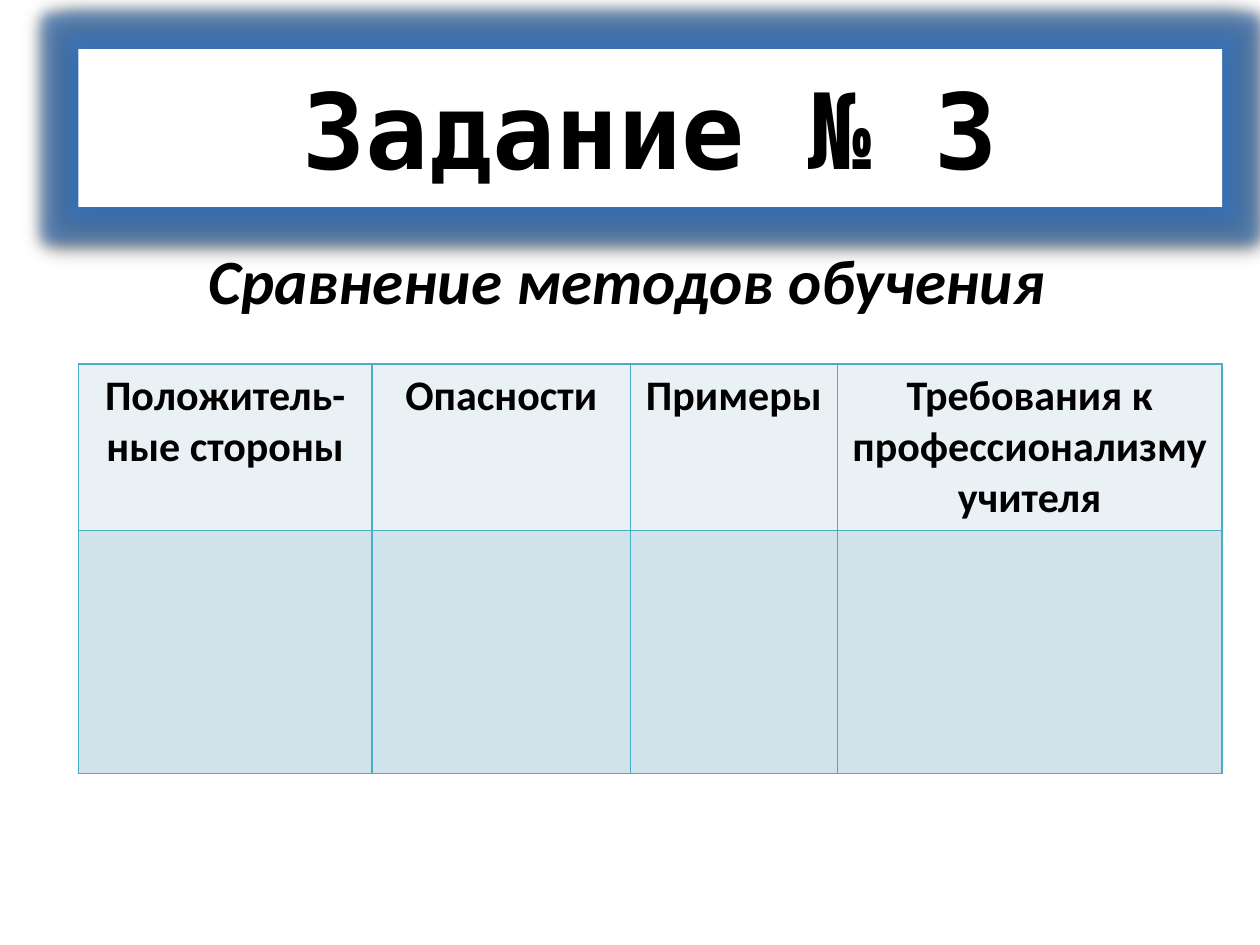
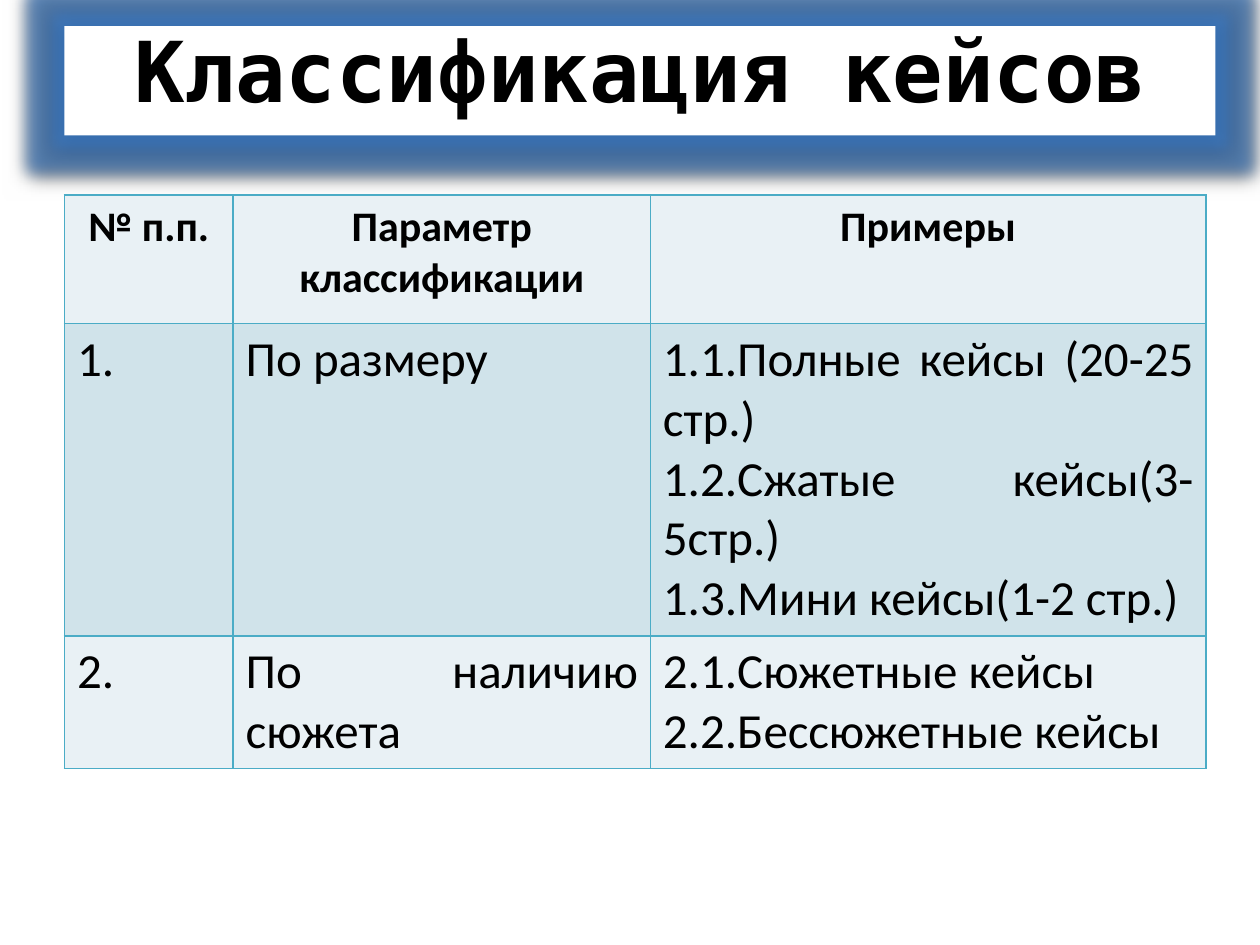
from lxml import etree
from pptx import Presentation
from pptx.dml.color import RGBColor
from pptx.enum import shapes, text
from pptx.oxml import ns
from pptx.util import Cm, Pt

BLACK = RGBColor(0x00, 0x00, 0x00)
WHITE = RGBColor(0xFF, 0xFF, 0xFF)
GLOW = RGBColor(0x3F, 0x80, 0xCD)
BORDER = RGBColor(0x4B, 0xAC, 0xC6)
BANDS = [RGBColor(0xE9, 0xF1, 0xF5), RGBColor(0xD0, 0xE3, 0xEA)]
TITLE_FONT = "DejaVu Sans Mono"
BODY_FONT = "Calibri"
CENTER = text.PP_ALIGN.CENTER
JUSTIFY = text.PP_ALIGN.JUSTIFY

TITLE_EFFECTS = f"""<a:effectLst {ns.nsdecls('a')}>
<a:glow rad="177800"><a:srgbClr val="{GLOW}"><a:alpha val="60000"/></a:srgbClr></a:glow>
<a:outerShdw blurRad="107950" dist="12700" dir="5400000" algn="ctr" rotWithShape="0">
<a:srgbClr val="{BLACK}"/></a:outerShdw></a:effectLst>"""
CELL_LINE = f"""<a:{{side}} {ns.nsdecls('a')} w="12700">
<a:solidFill><a:srgbClr val="{BORDER}"/></a:solidFill></a:{{side}}>"""


def add_run(paragraph, words, size, font=BODY_FONT, bold=True, italic=False):
    run = paragraph.add_run()
    run.text = words
    run.font.name = font
    run.font.size = Pt(size)
    run.font.bold = bold
    run.font.italic = italic
    run.font.color.rgb = BLACK


presentation = Presentation()
presentation.slide_width = Cm(25.4)
presentation.slide_height = Cm(19.05)

slides = [
    {
        "title": "Задание № 3", "title_size": 60, "line_spacing": None,
        "title_box": (1.58, 0.99, 23.06, 3.18),
        "subtitle": "Сравнение методов обучения",
        "table_top": 7.34, "columns": [5.92, 5.21, 4.17, 7.75], "rows": [3.35, 4.9],
        "cells": [
            [["Положитель-ные стороны"], ["Опасности"], ["Примеры"],
             ["Требования к профессионализму", "учителя"]],
            [[], [], [], []],
        ],
    },
    {
        "title": "Классификация кейсов", "title_size": 48, "line_spacing": Pt(44),
        "title_box": (1.3, 0.53, 23.2, 2.2),
        "subtitle": None,
        "table_top": 3.93, "columns": [3.4, 8.41, 11.2], "rows": [2.59, 6.3, 2.67],
        "cells": [
            [["№ п.п."], ["Параметр классификации"], ["Примеры"]],
            [["1."], ["По размеру"],
             ["1.1.Полные кейсы (20-25 стр.)", "1.2.Сжатые кейсы(3-5стр.)",
              "1.3.Мини кейсы(1-2 стр.)"]],
            [["2."], ["По наличию сюжета"],
             ["2.1.Сюжетные кейсы", "2.2.Бессюжетные кейсы"]],
        ],
    },
]

for content in slides:
    slide = presentation.slides.add_slide(presentation.slide_layouts[6])

    title_box = [Cm(length) for length in content["title_box"]]
    title = slide.shapes.add_shape(shapes.MSO_SHAPE.RECTANGLE, *title_box)
    title.fill.solid()
    title.fill.fore_color.rgb = WHITE
    title.line.fill.background()
    title._element.spPr.append(etree.fromstring(TITLE_EFFECTS))
    title.text_frame.word_wrap = True
    title.text_frame.vertical_anchor = text.MSO_ANCHOR.MIDDLE
    paragraph = title.text_frame.paragraphs[0]
    paragraph.alignment = CENTER
    paragraph.line_spacing = content["line_spacing"]
    add_run(paragraph, content["title"], content["title_size"], TITLE_FONT)

    if content["subtitle"]:
        subtitle = slide.shapes.add_textbox(Cm(3.96), Cm(4.75), Cm(17.53), Cm(1.8))
        subtitle.text_frame.word_wrap = False
        subtitle.text_frame.auto_size = text.MSO_AUTO_SIZE.SHAPE_TO_FIT_TEXT
        add_run(subtitle.text_frame.paragraphs[0], content["subtitle"], 36, italic=True)

    columns, rows = content["columns"], content["rows"]
    table = slide.shapes.add_table(
        len(rows), len(columns), title_box[0], Cm(content["table_top"]),
        Cm(sum(columns)), Cm(sum(rows))).table
    for column, width in zip(table.columns, columns):
        column.width = Cm(width)
    for row, height in zip(table.rows, rows):
        row.height = Cm(height)

    for row_index, row_cells in enumerate(content["cells"]):
        header = row_index == 0
        for column_index, lines in enumerate(row_cells):
            cell = table.cell(row_index, column_index)
            cell.fill.solid()
            cell.fill.fore_color.rgb = BANDS[row_index % 2]
            properties = cell._tc.get_or_add_tcPr()
            for position, side in enumerate(["lnL", "lnR", "lnT", "lnB"]):
                properties.insert(position, etree.fromstring(CELL_LINE.format(side=side)))
            for line_index, line in enumerate(lines):
                frame = cell.text_frame
                paragraph = frame.add_paragraph() if line_index else frame.paragraphs[0]
                paragraph.alignment = CENTER if header else JUSTIFY
                add_run(paragraph, line, 24 if header else 28, bold=header)

presentation.save("out.pptx")
